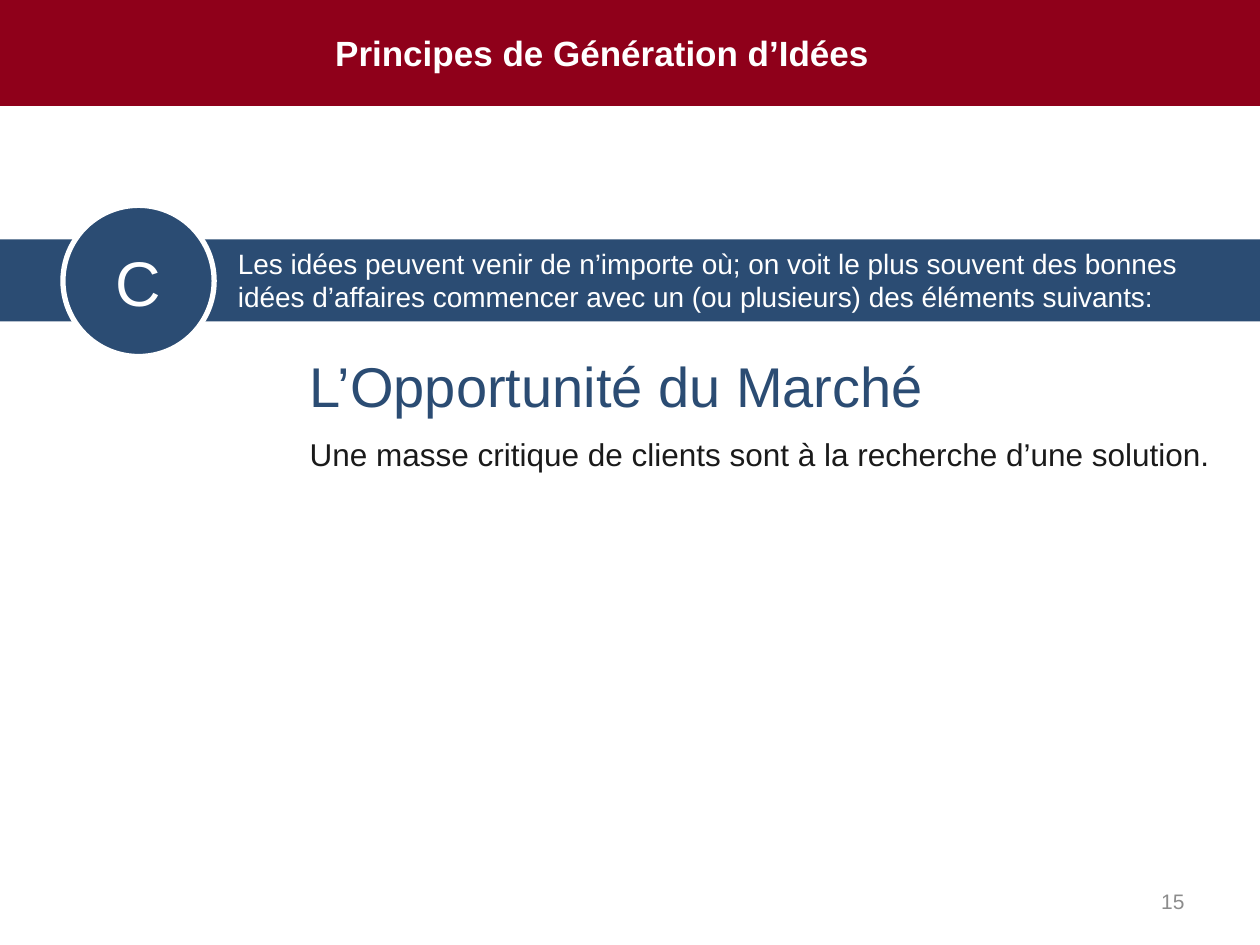
from dataclasses import dataclass

import pptx
import pptx.dml.color
import pptx.enum.shapes
import pptx.enum.text
import pptx.util

Inches = pptx.util.Inches
Anchor = pptx.enum.text.MSO_ANCHOR
Align = pptx.enum.text.PP_ALIGN
AutoSize = pptx.enum.text.MSO_AUTO_SIZE
Preset = pptx.enum.shapes.MSO_SHAPE

RED, BLUE, WHITE, BLACK, GREY = "8F001A", "2B4C73", "FFFFFF", "1A1A1A", "8C8C8C"
Box = tuple[float, float, float, float]


@dataclass
class Label:
    text: str
    size: int
    color: str
    bold: bool = False
    align: Align = Align.LEFT
    anchor: Anchor = Anchor.MIDDLE
    wrap: bool = True
    auto_size: AutoSize = AutoSize.NONE


def rgb(value: str) -> pptx.dml.color.RGBColor:
    return pptx.dml.color.RGBColor.from_string(value)


def write(shape, label: Label) -> None:
    frame = shape.text_frame
    frame.text = label.text
    frame_format = {
        "word_wrap": label.wrap,
        "auto_size": label.auto_size,
        "vertical_anchor": label.anchor,
    }
    for name, value in frame_format.items():
        setattr(frame, name, value)
    paragraph = frame.paragraphs[0]
    paragraph.alignment = label.align
    font = paragraph.runs[0].font
    font_format = {"name": "Arial", "size": pptx.util.Pt(label.size), "bold": label.bold}
    for name, value in font_format.items():
        setattr(font, name, value)
    font.color.rgb = rgb(label.color)


def add_filled_shape(slide, preset: Preset, box: Box, fill: str):
    """Add a flat preset shape without outline."""
    shape = slide.shapes.add_shape(preset, *map(Inches, box))
    shape.shadow.inherit = False
    shape.fill.solid()
    shape.fill.fore_color.rgb = rgb(fill)
    shape.line.fill.background()
    return shape


def add_label(slide, box: Box, label: Label) -> None:
    write(slide.shapes.add_textbox(*map(Inches, box)), label)


def add_title(slide, box: Box, label: Label) -> None:
    """Place the title on top of a full-width red band."""
    band = add_filled_shape(slide, Preset.RECTANGLE, (0, 0, 10, 0.84), RED)
    title = slide.shapes.title
    title.element.addprevious(band.element)
    title.left, title.top, title.width, title.height = map(Inches, box)
    write(title, label)


def add_badge(slide, box: Box, label: Label) -> None:
    """Add a white-rimmed circle holding a letter."""
    badge = add_filled_shape(slide, Preset.OVAL, box, BLUE)
    badge.line.color.rgb = rgb(WHITE)
    badge.line.width = pptx.util.Pt(3)
    write(badge, label)


def main() -> None:
    presentation = pptx.Presentation()
    presentation.slide_width, presentation.slide_height = Inches(10), Inches(7.5)
    slide = presentation.slides.add_slide(presentation.slide_layouts.get_by_name("Title Only"))

    add_title(slide, (2.56, 0, 7.44, 0.84),
              Label("Principes de Génération d’Idées", 20, WHITE, bold=True))
    add_filled_shape(slide, Preset.RECTANGLE, (0, 1.9, 10, 0.65), BLUE)
    add_badge(slide, (0.5, 1.63, 1.2, 1.2), Label("C", 36, WHITE, align=Align.CENTER))

    fit = AutoSize.SHAPE_TO_FIT_TEXT
    add_label(slide, (1.79, 1.9, 7.77, 0.64), Label(
        "Les idées peuvent venir de n’importe où; on voit le plus souvent des bonnes "
        "idées d’affaires commencer avec un (ou plusieurs) des éléments suivants:",
        16, WHITE, auto_size=fit))
    add_label(slide, (2.36, 2.74, 5.11, 0.64), Label(
        "L’Opportunité du Marché", 32, BLUE, anchor=Anchor.TOP, wrap=False, auto_size=fit))
    add_label(slide, (2.36, 3.4, 7.41, 0.4), Label(
        "Une masse critique de clients sont à la recherche d’une solution.",
        18, BLACK, anchor=Anchor.TOP, wrap=False, auto_size=fit))
    add_label(slide, (7.17, 6.95, 2.33, 0.4), Label("15", 12, GREY, align=Align.RIGHT))

    presentation.save("out.pptx")


if __name__ == "__main__":
    main()
